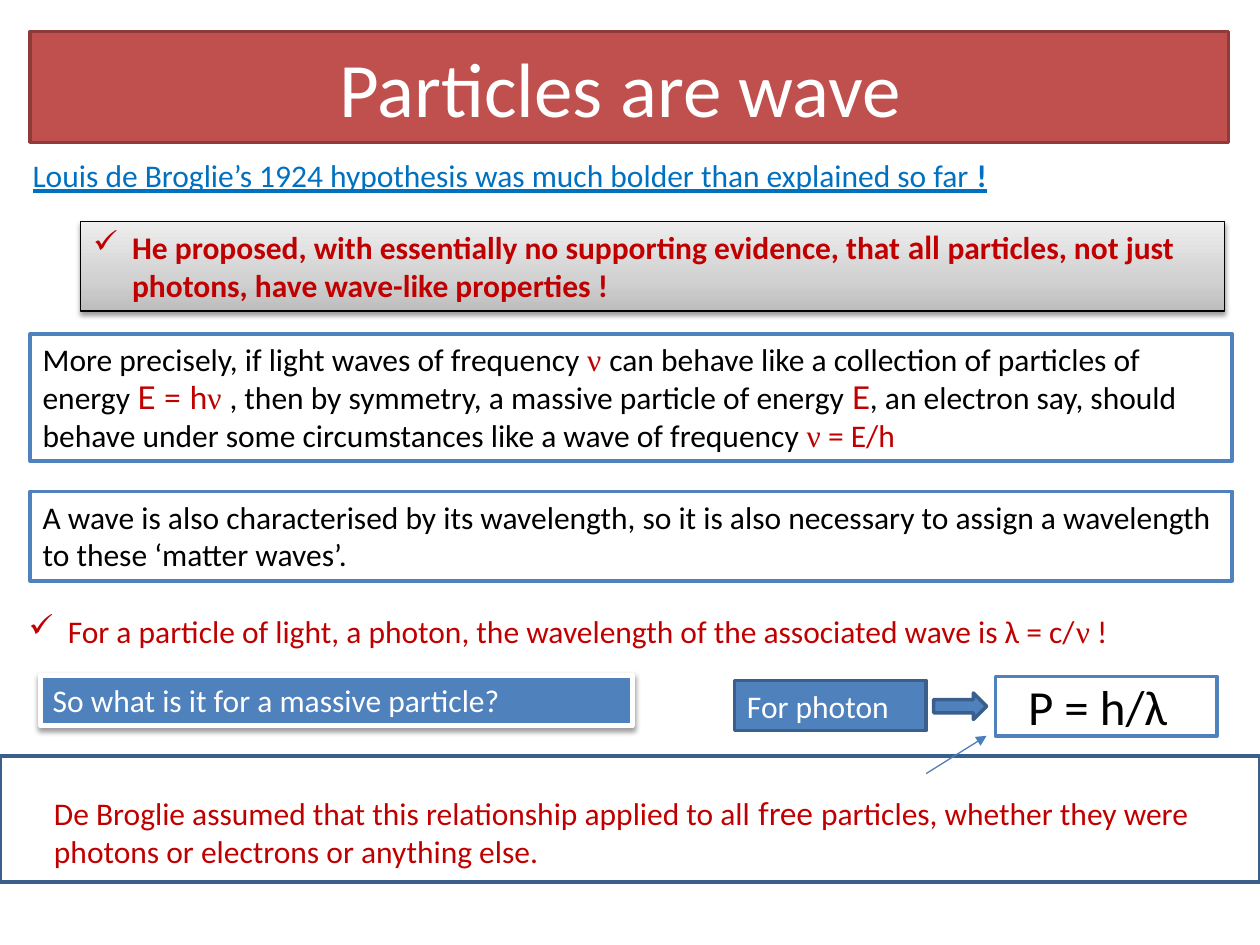
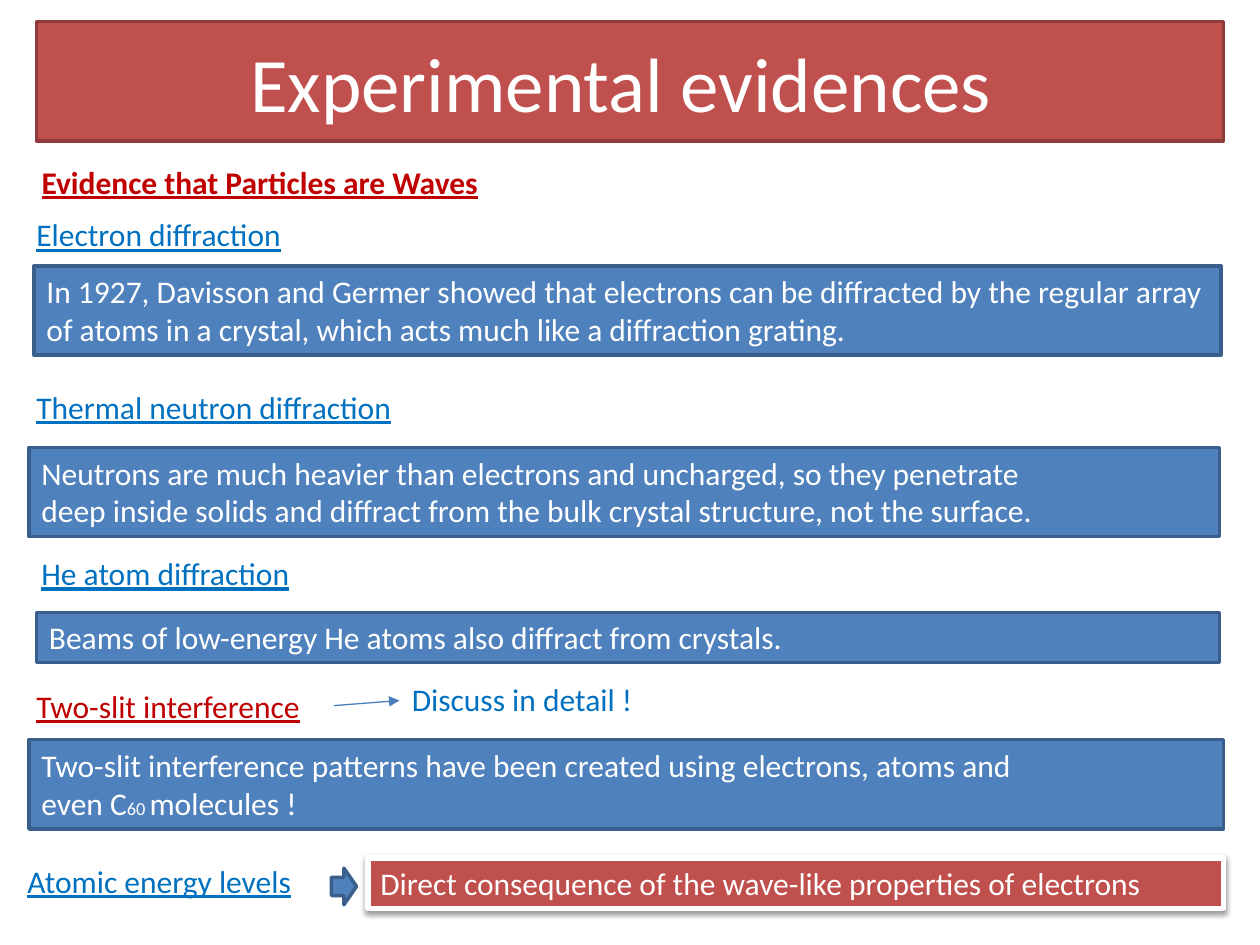
"""Build two slides on matter waves and the evidence for them."""
import dataclasses

import lxml.etree
import pptx
import pptx.dml.color
import pptx.enum.shapes
import pptx.enum.text
import pptx.oxml.ns
import pptx.util

Inches = pptx.util.Inches
Pt = pptx.util.Pt
Shape = pptx.enum.shapes.MSO_SHAPE
qn = pptx.oxml.ns.qn


@dataclasses.dataclass(frozen=True)
class Theme:
    font: str = "Calibri"
    accent_font: str = "Lato"
    greek_font: str = "Times New Roman"
    title_size: float = 44
    formula_size: float = 28
    text_size: float = 18
    index_size: float = 10.5
    black: str = "000000"
    white: str = "FFFFFF"
    blue: str = "4F81BD"
    blue_edge: str = "3A5F8C"
    arrow: str = "4B7EBC"
    red: str = "C0504D"
    red_edge: str = "8E3B39"
    key: str = "C00000"
    topic: str = "0070C0"
    silver: tuple = ((0, "BDBDBD"), (0.35, "D1D1D1"), (1, "EEEEEE"))


THEME = Theme()
GREEK = {"name": THEME.greek_font}
GREEK_KEY = {"name": THEME.greek_font, "color": THEME.key}
ACCENT = {"name": THEME.accent_font}
ACCENT_KEY = {"name": THEME.accent_font, "color": THEME.key}


def rgb(color):
    return pptx.dml.color.RGBColor.from_string(color)


def style_font(font, color=None, **settings):
    for attribute in settings.keys() & {"name"}:
        font.name = settings[attribute]
    if "size" in settings:
        font.size = settings["size"]
    if "bold" in settings:
        font.bold = settings["bold"]
    if "underline" in settings:
        font.underline = settings["underline"]
    if color:
        font.color.rgb = rgb(color)


class Deck:
    def __init__(self, theme):
        self.theme = theme
        self.presentation = pptx.Presentation()
        self.presentation.slide_width = Inches(10)
        self.presentation.slide_height = Inches(7.5)
        self.slide = None

    def start(self, title, place, layout):
        self.slide = self.presentation.slides.add_slide(self.presentation.slide_layouts[layout])
        heading = self.slide.shapes.title
        self.place(heading, place)
        self.paint(heading, self.theme.red, self.theme.red_edge, 2)
        self.set_text(heading, [title], self.theme.white, size=self.theme.title_size, grow=False)
        heading.text_frame.vertical_anchor = pptx.enum.text.MSO_ANCHOR.MIDDLE
        heading.text_frame.paragraphs[0].alignment = pptx.enum.text.PP_ALIGN.CENTER

    def place(self, shape, place):
        shape.left, shape.top, shape.width, shape.height = map(Inches, place)

    def paint(self, shape, fill, edge, width):
        shape.fill.solid()
        shape.fill.fore_color.rgb = rgb(fill)
        shape.line.color.rgb = rgb(edge)
        shape.line.width = Pt(width)

    def set_text(self, shape, lines, color, size=None, bold=None, underline=None,
                 wrap=True, grow=True, check=False):
        frame = shape.text_frame
        frame.word_wrap = wrap
        auto = pptx.enum.text.MSO_AUTO_SIZE
        frame.auto_size = auto.SHAPE_TO_FIT_TEXT if grow else auto.NONE
        frame.vertical_anchor = pptx.enum.text.MSO_ANCHOR.TOP
        for number, line in enumerate(lines):
            paragraph = frame.add_paragraph() if number else frame.paragraphs[0]
            paragraph.alignment = pptx.enum.text.PP_ALIGN.LEFT
            style_font(paragraph.font, color, name=self.theme.font,
                       size=Pt(size or self.theme.text_size), bold=bold, underline=underline)
            for part in [line] if isinstance(line, str) else line:
                words, changes = (part, {}) if isinstance(part, str) else part
                run = paragraph.add_run()
                run.text = words
                style_font(run.font, **changes)
            if check:
                self.set_bullet(paragraph, 0.31, "a:buChar", char="✓")

    def set_bullet(self, paragraph, indent, tag, **attributes):
        properties = paragraph._p.get_or_add_pPr()
        properties.set("marL", str(Inches(indent)))
        properties.set("indent", str(-Inches(indent)))
        bullet = lxml.etree.Element(qn(tag), **attributes)
        properties.insert_element_before(bullet, "a:tabLst", "a:defRPr", "a:extLst")

    def label(self, place, lines, color, **style):
        box = self.slide.shapes.add_textbox(*map(Inches, place))
        self.set_text(box, lines, color, **style)

    def topic(self, place, words, color=None, underline=True):
        self.label(place, [words], color or self.theme.topic, underline=underline, wrap=False)

    def subtitle(self, place, words):
        body = self.slide.placeholders[1]
        self.place(body, place)
        self.set_text(body, [words], self.theme.key, bold=True, underline=True, grow=False)
        self.set_bullet(body.text_frame.paragraphs[0], 0, "a:buNone")

    def preset(self, kind, place, fill, edge, width=2):
        shape = self.slide.shapes.add_shape(kind, *map(Inches, place))
        shape.shadow.inherit = False
        self.paint(shape, fill, edge, width)
        return shape

    def panel(self, place, lines, fill=None, edge=None, color=None, width=2, **style):
        theme = self.theme
        shape = self.preset(Shape.RECTANGLE, place, fill or theme.blue,
                            edge or theme.blue_edge, width)
        self.set_text(shape, lines, color or theme.white, **style)
        return shape

    def outlined(self, place, lines, **style):
        return self.panel(place, lines, self.theme.white, self.theme.blue,
                          self.theme.black, **style)

    def raised(self, place, lines, fill, edge=None, width=3, **style):
        shape = self.panel(place, lines, fill, edge or self.theme.white, width=width, **style)
        effects = shape._element.spPr.find(qn("a:effectLst"))
        shadow = lxml.etree.SubElement(
            effects, qn("a:outerShdw"), blurRad=str(Pt(3.1)), dist=str(Pt(1.6)),
            dir="5400000", rotWithShape="0")
        tone = lxml.etree.SubElement(shadow, qn("a:srgbClr"), val=self.theme.black)
        lxml.etree.SubElement(tone, qn("a:alpha"), val="38000")
        return shape

    def shade(self, shape, tones):
        shape.fill.gradient()
        shape.fill.gradient_angle = 90
        stops = shape._element.spPr.find(qn("a:gradFill")).find(qn("a:gsLst"))
        for stop in list(stops):
            stops.remove(stop)
        for position, color in tones:
            stop = lxml.etree.SubElement(stops, qn("a:gs"), pos=str(round(position * 100000)))
            lxml.etree.SubElement(stop, qn("a:srgbClr"), val=color)

    def block_arrow(self, place):
        self.preset(Shape.RIGHT_ARROW, place, self.theme.blue, self.theme.blue_edge)

    def arrow(self, start, end):
        line = self.slide.shapes.add_connector(
            pptx.enum.shapes.MSO_CONNECTOR.STRAIGHT, *map(Inches, (*start, *end)))
        line.line.color.rgb = rgb(self.theme.arrow)
        line.line.width = Pt(0.75)
        properties = line._element.spPr
        lxml.etree.SubElement(properties.find(qn("a:ln")), qn("a:tailEnd"), type="triangle")
        lxml.etree.SubElement(properties, qn("a:effectLst"))

    def loop(self, points):
        builder = self.slide.shapes.build_freeform(*points[0], scale=Inches(1))
        builder.add_line_segments(points[1:], close=False)
        outline = builder.convert_to_shape()
        outline.shadow.inherit = False
        outline.fill.background()
        outline.line.color.rgb = rgb(self.theme.blue_edge)
        outline.line.width = Pt(2)


HAND_DRAWN_LOOP = [
    (0.32, 6.18), (0, 6.72), (0, 6.75), (0.02, 6.78), (0.09, 6.84), (0.17, 6.87),
    (0.27, 6.88), (0.46, 6.91), (0.71, 6.92), (0.86, 6.94), (1.01, 6.97), (1.26, 7.01),
    (1.54, 7.03), (1.65, 7.06), (1.86, 7.08), (2.3, 7.1), (2.72, 7.13), (2.93, 7.16),
    (3.31, 7.17), (7.95, 7.16), (8.07, 7.13), (8.27, 7.1), (8.4, 7.06), (8.52, 7.01),
    (8.7, 6.94), (8.95, 6.9), (9.07, 6.87), (9.25, 6.82), (9.34, 6.78), (9.49, 6.73),
    (9.63, 6.68), (9.68, 6.63), (9.72, 6.62), (9.73, 6.59), (9.74, 6.45), (9.73, 6.37),
    (9.69, 6.32), (9.64, 6.3), (9.47, 6.28), (9.38, 6.27), (9.29, 6.24), (9.08, 6.23),
    (8.93, 6.2), (8.66, 6.19), (8.49, 6.18), (8.25, 6.17), (7.98, 6.14), (7.6, 6.12),
    (6.88, 6.12), (6.62, 6.1), (6.2, 6.09), (5.91, 6.08), (5.66, 6.02), (5.51, 6),
    (5.2, 6.03), (3.99, 6.08), (3.84, 6.11), (3.69, 6.14), (3.55, 6.17), (3.25, 6.21),
    (2.98, 6.26), (2.85, 6.26), (2.6, 6.24), (1.42, 6.23), (1.38, 6.24), (0.82, 6.25),
    (0.74, 6.27), (0.49, 6.28), (0.32, 6.31), (0.23, 6.35)]


def add_hypothesis(deck):
    theme = deck.theme
    deck.start("Particles are wave ", (0.24, 0.25, 9.51, 0.88), 5)
    deck.label((0.16, 1.19, 9.25, 0.4),
               [["Louis de Broglie’s 1924 hypothesis was much bolder than explained so far",
                 (" !", {"bold": True})]], theme.topic, underline=True)
    proposal = deck.raised(
        (0.64, 1.76, 9.08, 0.71),
        [["He proposed, with essentially no supporting evidence, that ", ("all ", ACCENT),
          "particles, not just photons, have wave-like properties !"]],
        theme.white, theme.black, 0.75, color=theme.key, bold=True, check=True)
    deck.shade(proposal, theme.silver)
    formula = deck.outlined((7.9, 5.37, 1.76, 0.47), ["P = h/λ"], size=theme.formula_size)
    frame = formula.text_frame
    frame.margin_top = frame.margin_right = frame.margin_bottom = 0
    frame.margin_left = Inches(0.26)
    deck.panel((5.83, 5.4, 1.52, 0.4), ["For photon"])
    deck.block_arrow((7.41, 5.5, 0.42, 0.21))
    deck.outlined(
        (0.24, 2.65, 9.54, 1.01),
        [["More precisely, if light waves of frequency ", ("ν ", GREEK_KEY),
          "can behave like a collection of particles of energy ", ("E = h", ACCENT_KEY),
          ("ν ", GREEK_KEY), ", then by symmetry, a massive particle of energy ",
          ("E", ACCENT_KEY),
          ", an electron say, should behave under some circumstances like a wave of frequency ",
          ("ν", GREEK_KEY), (" = E/h", {"color": theme.key})]])
    deck.outlined(
        (0.24, 3.9, 9.54, 0.71),
        ["A wave is also characterised by its wavelength, so it is also necessary "
         "to assign a wavelength to these ‘matter waves’."])
    deck.label(
        (0.13, 4.81, 9.54, 0.4),
        [["For a particle of light, a photon, the wavelength of the associated wave is λ = c/",
          ("ν", GREEK), " !"]], theme.key, check=True)
    deck.raised((0.32, 5.36, 4.7, 0.4), ["So what is it for a massive particle?"], theme.blue)
    deck.label(
        (0.33, 6.25, 9.42, 0.71),
        [["De Broglie assumed that this relationship applied to all ", ("free ", ACCENT),
          "particles, whether they were photons or electrons or anything else."]], theme.key)
    deck.loop(HAND_DRAWN_LOOP)
    deck.arrow((7.35, 6.14), (7.83, 5.84))


def add_evidence(deck):
    theme = deck.theme
    deck.start("Experimental evidences ", (0.29, 0.17, 9.42, 0.95), 1)
    deck.subtitle((0.23, 1.24, 4.27, 0.48), "Evidence that Particles are Waves")
    experiments = [
        ("Electron diffraction", (0.19, 1.66, 2.29, 0.4), theme.topic,
         (0.27, 2.11, 9.42, 0.71),
         ["In 1927, Davisson and Germer showed that electrons can be diffracted by the "
          "regular array of atoms in a crystal, which acts much like a diffraction grating."]),
        ("Thermal neutron diffraction", (0.19, 3.03, 3.21, 0.4), theme.topic,
         (0.23, 3.55, 9.45, 0.71),
         ["Neutrons are much heavier than electrons and uncharged, so they penetrate",
          "deep inside solids and diffract from the bulk crystal structure, not the surface."]),
        ("He atom diffraction", (0.23, 4.35, 2.32, 0.4), theme.topic,
         (0.29, 4.86, 9.39, 0.4),
         ["Beams of low-energy He atoms also diffract from crystals."]),
        ("Two-slit interference", (0.19, 5.4, 2.46, 0.4), theme.key,
         (0.23, 5.87, 9.48, 0.71),
         ["Two-slit interference patterns have been created using electrons, atoms and",
          ["even C", ("60 ", {"size": Pt(theme.index_size)}), "molecules !"]]),
    ]
    for name, name_place, color, finding_place, finding in experiments:
        deck.topic(name_place, name, color)
        deck.panel(finding_place, finding)
    deck.topic((0.12, 6.79, 2.53, 0.4), "Atomic energy levels")
    deck.block_arrow((2.63, 6.89, 0.2, 0.29))
    deck.raised((2.92, 6.81, 6.79, 0.4),
                ["Direct consequence of the wave-like properties of electrons"], theme.red)
    deck.topic((3.17, 5.35, 2.17, 0.4), "Discuss in detail !", underline=None)
    deck.arrow((2.65, 5.6), (3.17, 5.56))


def main():
    deck = Deck(THEME)
    add_hypothesis(deck)
    add_evidence(deck)
    deck.presentation.save("out.pptx")


if __name__ == "__main__":
    main()
